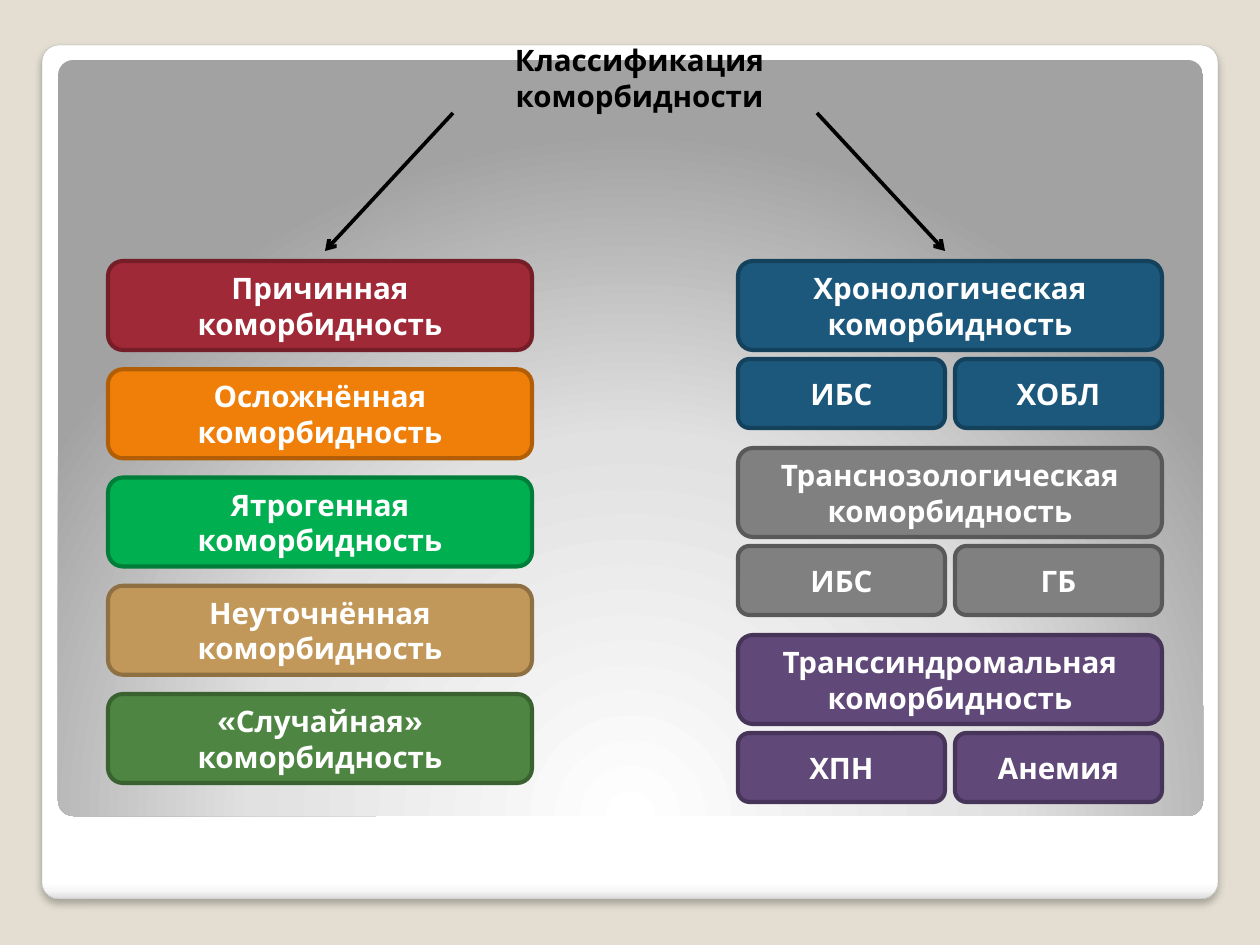
import pptx
import pptx.dml.color
import pptx.enum.shapes
import pptx.enum.text
import pptx.oxml
import pptx.oxml.ns
import pptx.util

# Content
HEADING = "Классификация коморбидности"
CAUSAL_KINDS = [
    ("Причинная коморбидность", "red"),
    ("Осложнённая коморбидность", "orange"),
    ("Ятрогенная коморбидность", "green"),
    ("Неуточнённая коморбидность", "sand"),
    ("«Случайная» коморбидность", "olive"),
]
LINKED_KINDS = [
    ("Хронологическая коморбидность", "blue", ("ИБС", "ХОБЛ")),
    ("Транснозологическая коморбидность", "gray", ("ИБС", "ГБ")),
    ("Транссиндромальная коморбидность", "violet", ("ХПН", "Анемия")),
]

THEME = {
    "font": "Cabin", "size": 24, "border": 3.35, "arrow": 3, "panel_border": 0.16,
    "page": "E3DED1", "heading": "000000", "label": "FFFFFF", "panel_line": "A4A4A4",
    # fill and border of each kind
    "red": ("9F2936", "761E28"), "orange": ("F07F09", "B25E07"),
    "green": ("00B050", "007E39"), "sand": ("C19859", "8F7042"),
    "olive": ("4E8542", "3A6231"), "blue": ("1B587C", "14415C"),
    "gray": ("808080", "595959"), "violet": ("604878", "473559"),
    # gradient stops: percent and colour
    "panel": [(0, "FFFFFF"), (98, "FFFFFF"), (99, "F7F7F7"), (100, "DADADA")],
    "glow": [(0, "FFFFFF"), (55, "E1E1E1"), (100, "A2A2A2")],
}

# Layout in px
EMU_PER_PX = 914400 / 88.6
PAGE_W, PAGE_H = 1260, 945
PANEL = (42, 45, 1176, 854)
GLOW = (58, 60, 1145, 756)
HEADING_BOX = (393, 69, 493, 50)
INSET_X, INSET_Y = 12, 6
LEFT_X, RIGHT_X = 108, 738
KIND_W, KIND_H = 424, 89
PART_W, PART_H = 207, 69
FIRST_TOP, LAST_LEFT_TOP, LAST_RIGHT_TOP = 261, 694, 635
PART_DROP = 98
ARROWS = [(453, 113, 325, 251), (817, 113, 945, 251)]


def px(*lengths):
    return [pptx.util.Emu(round(length * EMU_PER_PX)) for length in lengths]


def rgb(code):
    return pptx.dml.color.RGBColor.from_string(code)


def xml(markup):
    tag, rest = markup.split(" ", 1) if " " in markup.split(">")[0] else markup.split(">", 1)
    joint = " " if " " in markup.split(">")[0] else ">"
    return pptx.oxml.parse_xml(f"{tag} {pptx.oxml.ns.nsdecls('a')}{joint}{rest}")


def set_text(shape, text, colour, anchor):
    frame = shape.text_frame
    frame.word_wrap = True
    frame.vertical_anchor = anchor
    frame.margin_left, frame.margin_right = px(INSET_X, INSET_X)
    frame.margin_top, frame.margin_bottom = px(INSET_Y, INSET_Y)
    frame.text = text
    line = frame.paragraphs[0]
    line.alignment = pptx.enum.text.PP_ALIGN.CENTER
    font = line.runs[0].font
    font.name, font.size, font.bold = THEME["font"], pptx.util.Pt(THEME["size"]), True
    font.color.rgb = rgb(colour)


def add_rounded(box):
    shape = slide.shapes.add_shape(
        pptx.enum.shapes.MSO_SHAPE.ROUNDED_RECTANGLE, *px(*box))
    shape.shadow.inherit = False
    return shape


def add_card(text, kind, *box):
    card = add_rounded(box)
    fill, border = THEME[kind]
    card.fill.solid()
    card.fill.fore_color.rgb = rgb(fill)
    card.line.color.rgb = rgb(border)
    card.line.width = pptx.util.Pt(THEME["border"])
    set_text(card, text, THEME["label"], pptx.enum.text.MSO_ANCHOR.MIDDLE)


def add_gradient_panel(box, stops, direction):
    panel = add_rounded(box)
    panel.adjustments[0] = 0.02
    panel.fill.background()
    blank_fill = panel._element.spPr.find(pptx.oxml.ns.qn("a:noFill"))
    marks = "".join(f'<a:gs pos="{at * 1000}"><a:srgbClr val="{colour}"/></a:gs>'
                    for at, colour in stops)
    gradient = xml('<a:gradFill rotWithShape="1">'
                   f"<a:gsLst>{marks}</a:gsLst>{direction}</a:gradFill>")
    panel._element.spPr.replace(blank_fill, gradient)
    return panel


def row_tops(first, last, count):
    return [first + row * (last - first) / (count - 1) for row in range(count)]


deck = pptx.Presentation()
deck.slide_width, deck.slide_height = px(PAGE_W, PAGE_H)
slide = deck.slides.add_slide(deck.slide_layouts[6])
slide.background.fill.solid()
slide.background.fill.fore_color.rgb = rgb(THEME["page"])

# White panel with a soft shadow, and the grey glow on it
panel = add_gradient_panel(PANEL, THEME["panel"], '<a:lin ang="5400000" scaled="0"/>')
panel.line.color.rgb = rgb(THEME["panel_line"])
panel.line.width = pptx.util.Pt(THEME["panel_border"])
panel._element.spPr.find(pptx.oxml.ns.qn("a:effectLst")).append(xml(
    '<a:outerShdw blurRad="76200" dist="50800" dir="5400000" rotWithShape="0">'
    '<a:srgbClr val="000000"><a:alpha val="25000"/></a:srgbClr></a:outerShdw>'))
glow = add_gradient_panel(
    GLOW, THEME["glow"],
    '<a:path path="circle"><a:fillToRect l="50000" t="175000" r="50000" b="-75000"/></a:path>')
glow.line.fill.background()

# Heading
heading = slide.shapes.add_textbox(*px(*HEADING_BOX))
set_text(heading, HEADING, THEME["heading"], pptx.enum.text.MSO_ANCHOR.BOTTOM)

# Left column
causal_tops = row_tops(FIRST_TOP, LAST_LEFT_TOP, len(CAUSAL_KINDS))
for (label, kind), top in zip(CAUSAL_KINDS, causal_tops):
    add_card(label, kind, LEFT_X, top, KIND_W, KIND_H)

# Right column: each kind with its pair of diseases
linked_tops = row_tops(FIRST_TOP, LAST_RIGHT_TOP, len(LINKED_KINDS))
for (label, kind, diseases), top in zip(LINKED_KINDS, linked_tops):
    add_card(label, kind, RIGHT_X, top, KIND_W, KIND_H)
    for column, disease in enumerate(diseases):
        part_x = RIGHT_X + column * (KIND_W - PART_W)
        add_card(disease, kind, part_x, top + PART_DROP, PART_W, PART_H)

# Arrows from the heading to both columns
for ends in ARROWS:
    arrow = slide.shapes.add_connector(
        pptx.enum.shapes.MSO_CONNECTOR.STRAIGHT, *px(*ends))
    arrow.line.color.rgb = rgb(THEME["heading"])
    arrow.line.width = pptx.util.Pt(THEME["arrow"])
    arrow.line._get_or_add_ln().append(xml('<a:tailEnd type="arrow"/>'))
    arrow._element.spPr.append(xml("<a:effectLst></a:effectLst>"))

deck.save("out.pptx")
